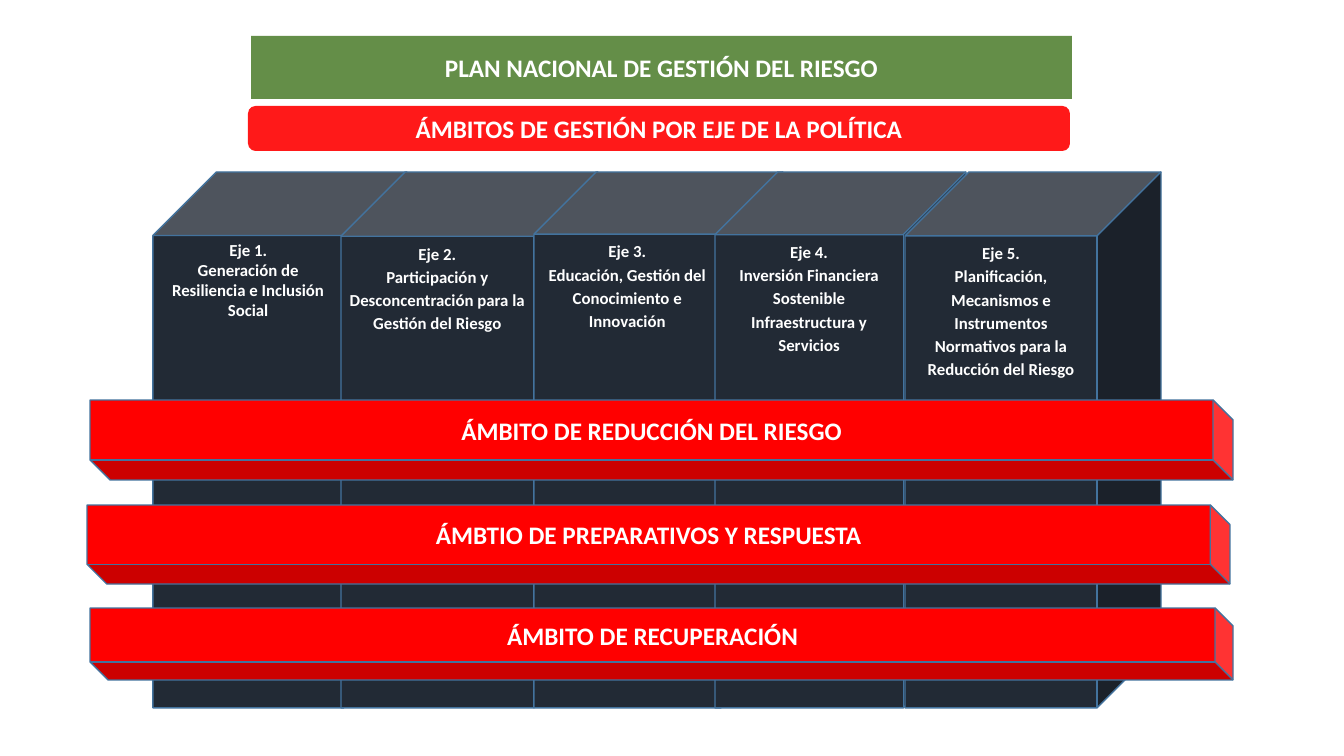
from dataclasses import dataclass

from lxml import etree
from pptx import Presentation
from pptx.dml.color import RGBColor
from pptx.enum.shapes import MSO_SHAPE
from pptx.enum.text import MSO_ANCHOR, MSO_AUTO_SIZE, PP_ALIGN
from pptx.oxml.ns import qn
from pptx.util import Emu, Pt

CUBE, ROUNDED = MSO_SHAPE.CUBE, MSO_SHAPE.ROUNDED_RECTANGLE
TOP, MIDDLE = MSO_ANCHOR.TOP, MSO_ANCHOR.MIDDLE
CENTER = PP_ALIGN.CENTER
NO_AUTOFIT = MSO_AUTO_SIZE.NONE

COLORS = {
    "pillar": "222A35",
    "scope": "FF0000",
    "plan": "548235",
    "edge": "43739E",
    "text": "FFFFFF",
}
FONT = "Calibri"
SLIDE_WIDTH, SLIDE_HEIGHT = 1344, 756
EMU_PER_PX = 12192000 / SLIDE_WIDTH
PILLAR_TOP, PILLAR_HEIGHT = 172, 536
BAR_LENGTH = 1143
BANNER_ALPHA = 90000


@dataclass
class Pillar:
    left: int
    width: int
    heading: str
    theme: str
    spacing: float = 1.15


@dataclass
class Bar:
    left: int
    top: int
    height: int
    scope: str


PILLARS = [
    Pillar(153, 254, "Eje 1.", "Generación de Resiliencia e Inclusión Social", 1.0),
    Pillar(341, 257, "Eje 2.", "Participación y Desconcentración para la Gestión del Riesgo"),
    Pillar(534, 249, "Eje 3.", "Educación, Gestión del Conocimiento e Innovación"),
    Pillar(715, 251, "Eje 4.", "Inversión Financiera Sostenible Infraestructura y Servicios"),
    Pillar(905, 256, "Eje 5.",
           "Planificación, Mecanismos e Instrumentos Normativos para la Reducción del Riesgo"),
]
BARS = [
    Bar(90, 400, 80, "ÁMBITO DE REDUCCIÓN DEL RIESGO"),
    Bar(87, 505, 79, "ÁMBTIO DE PREPARATIVOS Y RESPUESTA"),
    Bar(90, 608, 72, "ÁMBITO DE RECUPERACIÓN"),
]


def px(length: float) -> Emu:
    return Emu(round(length * EMU_PER_PX))


def color(name: str) -> RGBColor:
    return RGBColor.from_string(COLORS[name])


def write(shape, lines: list[str], size: int, anchor, spacing: float = 1.0) -> None:
    frame = shape.text_frame
    frame.word_wrap = True
    frame.auto_size = NO_AUTOFIT
    frame.vertical_anchor = anchor
    frame.margin_left = frame.margin_right = px(7)
    frame.margin_top = frame.margin_bottom = px(4)
    for index, line in enumerate(lines):
        paragraph = frame.add_paragraph() if index else frame.paragraphs[0]
        paragraph.alignment = CENTER
        paragraph.line_spacing = spacing
        run = paragraph.add_run()
        run.text = line
        run.font.name = FONT
        run.font.size = Pt(size)
        run.font.bold = True
        run.font.color.rgb = color("text")


def add_cube(slide, left: float, top: float, width: int, height: int, fill: str):
    cube = slide.shapes.add_shape(CUBE, px(left), px(top), px(width), px(height))
    cube.shadow.inherit = False
    cube.fill.solid()
    cube.fill.fore_color.rgb = color(fill)
    cube.line.color.rgb = color("edge")
    cube.line.width = Pt(1)
    return cube


def format_banner(banner, fill: str, text: str) -> None:
    banner.fill.solid()
    banner.fill.fore_color.rgb = color(fill)
    banner.line.fill.background()
    tint = banner._element.spPr.find(f"{qn('a:solidFill')}/{qn('a:srgbClr')}")
    etree.SubElement(tint, qn("a:alpha")).set("val", str(BANNER_ALPHA))
    write(banner, [text], 18, MIDDLE)


def add_pillar(slide, pillar: Pillar) -> None:
    cube = add_cube(slide, pillar.left, PILLAR_TOP, pillar.width, PILLAR_HEIGHT, "pillar")
    write(cube, [pillar.heading, pillar.theme], 12, TOP, pillar.spacing)


def add_bar(slide, bar: Bar) -> None:
    # The cube stands upright, then turns a quarter about its centre
    shift = (BAR_LENGTH - bar.height) / 2
    cube = add_cube(slide, bar.left + shift, bar.top - shift, bar.height, BAR_LENGTH, "scope")
    cube.rotation = 90
    write(cube, [bar.scope], 18, MIDDLE)
    cube.text_frame._txBody.bodyPr.set("vert", "vert270")


def main() -> None:
    presentation = Presentation()
    presentation.slide_width, presentation.slide_height = px(SLIDE_WIDTH), px(SLIDE_HEIGHT)
    slide = presentation.slides.add_slide(presentation.slide_layouts[5])

    # Title banner with rounded corners
    plan = slide.shapes.title
    plan.left, plan.top, plan.width, plan.height = px(251), px(36), px(821), px(63)
    outline = etree.SubElement(plan._element.spPr, qn("a:prstGeom"), prst="roundRect")
    etree.SubElement(outline, qn("a:avLst"))
    format_banner(plan, "plan", "PLAN NACIONAL DE GESTIÓN DEL RIESGO")

    # Subtitle banner
    policy = slide.shapes.add_shape(ROUNDED, px(248), px(106), px(822), px(45))
    policy.shadow.inherit = False
    format_banner(policy, "scope", "ÁMBITOS DE GESTIÓN POR EJE DE LA POLÍTICA")

    # Policy pillars, then the scopes that cross them
    for pillar in PILLARS:
        add_pillar(slide, pillar)
    for bar in BARS:
        add_bar(slide, bar)

    presentation.save("out.pptx")


if __name__ == "__main__":
    main()
